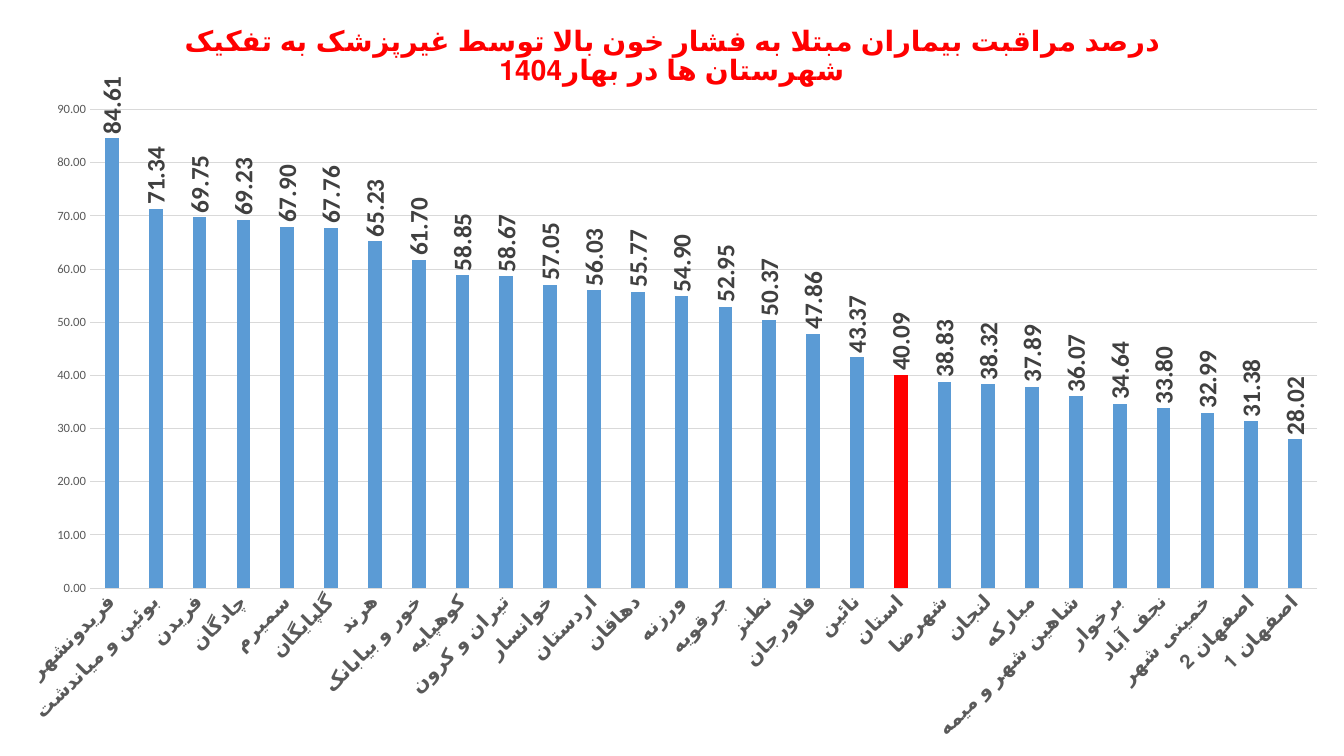
from lxml import etree
from pptx import Presentation
from pptx.chart.data import CategoryChartData
from pptx.dml.color import RGBColor
from pptx.enum.chart import XL_CHART_TYPE, XL_LABEL_POSITION, XL_TICK_MARK
from pptx.oxml import parse_xml
from pptx.oxml.ns import nsdecls, qn
from pptx.util import Inches, Pt

COLUMN = XL_CHART_TYPE.COLUMN_CLUSTERED
OUTSIDE = XL_LABEL_POSITION.OUTSIDE_END
NO_TICK = XL_TICK_MARK.NONE
BLUE = RGBColor(0x5B, 0x9B, 0xD5)
RED = RGBColor(0xFF, 0x00, 0x00)
BLACK = RGBColor(0x00, 0x00, 0x00)
DARK = RGBColor(0x40, 0x40, 0x40)
GRAY = RGBColor(0x59, 0x59, 0x59)
PALE = RGBColor(0xD9, 0xD9, 0xD9)

TITLE = "درصد مراقبت بیماران مبتلا به فشار خون بالا توسط غیرپزشک به تفکیک شهرستان ها در بهار1404"
STATE = "استان"
RATES = {
    "فریدونشهر": 84.61,
    "بوئین و میاندشت": 71.34,
    "فریدن": 69.75,
    "چادگان": 69.23,
    "سمیرم": 67.9,
    "گلپایگان": 67.76,
    "هرند": 65.23,
    "خور و بیابانک": 61.7,
    "کوهپایه": 58.85,
    "تیران و کرون": 58.67,
    "خوانسار": 57.05,
    "اردستان": 56.03,
    "دهاقان": 55.77,
    "ورزنه": 54.9,
    "جرقویه": 52.95,
    "نطنز": 50.37,
    "فلاورجان": 47.86,
    "نائین": 43.37,
    STATE: 40.09,
    "شهرضا": 38.83,
    "لنجان": 38.32,
    "مبارکه": 37.89,
    "شاهین شهر و میمه": 36.07,
    "برخوار": 34.64,
    "نجف آباد": 33.8,
    "خمینی شهر": 32.99,
    "اصفهان 2": 31.38,
    "اصفهان 1": 28.02,
}


def style(font, size=10, color=BLACK, bold=False):
    """Format a font."""
    font.name, font.size, font.bold = "Calibri", Pt(size), bold
    font.color.rgb = color


def write(frame, text, **form):
    """Put formatted text in a frame."""
    frame.text = text
    style(frame.paragraphs[0].runs[0].font, **form)


def turn(part, angle):
    """Rotate the text of a chart part by degrees."""
    body = part._element.find(qn("c:txPr")).find(qn("a:bodyPr"))
    body.set("rot", str(angle * 60000))
    body.set("vert", "horz")


class Deck:
    """Hold the deck, its size and the current slide."""

    def __init__(self, width, height):
        """Start a deck with one blank slide."""
        self.show = Presentation()
        self.show.slide_width = self.width = Inches(width)
        self.show.slide_height = self.height = Inches(height)
        self.slide = self.show.slides.add_slide(self.show.slide_layouts[6])

    def chart(self, rates, left, top, width, height):
        """Add a column chart placed by shares of the slide."""
        data = CategoryChartData(number_format="0.00")
        data.categories = list(rates)
        data.add_series("Series 1", list(rates.values()))
        box = (int(left * self.width), int(top * self.height),
               int(width * self.width), int(height * self.height))
        chart = self.slide.shapes.add_chart(COLUMN, *box, data).chart
        style(chart.font)
        chart.has_legend = False
        return chart

    def title(self, chart, text, **form):
        """Give the chart its title."""
        chart.has_title = True
        write(chart.chart_title.text_frame, text, **form)
        chart.chart_title.include_in_layout = False

    def plot(self, chart, **shares):
        """Place the inner plot area by shares of the chart."""
        area = chart._chartSpace.chart.plotArea
        for old in area.findall(qn("c:layout")):
            area.remove(old)
        layout = parse_xml(f"<c:layout {nsdecls('c')}><c:manualLayout/></c:layout>")
        modes = {"layoutTarget": "inner", "xMode": "edge", "yMode": "edge"}
        for name, value in {**modes, **shares}.items():
            etree.SubElement(layout[0], qn(f"c:{name}")).set("val", str(value))
        area.insert(0, layout)

    def axes(self, chart):
        """Format both axes and the grid lines."""
        names, scale = chart.category_axis, chart.value_axis
        for axis in (names, scale):
            axis.major_tick_mark = axis.minor_tick_mark = NO_TICK
        style(names.tick_labels.font, size=14, color=GRAY, bold=True)
        style(scale.tick_labels.font, size=9, color=GRAY)
        turn(names, -45)
        scale.minimum_scale, scale.maximum_scale, scale.major_unit = 0, 90, 10
        scale.tick_labels.number_format = "0.00"
        scale.tick_labels.number_format_is_linked = False
        scale.format.line.fill.background()
        for line in (names.format.line, scale.major_gridlines.format.line):
            line.width = Pt(0.75)
            line.color.rgb = PALE

    def bars(self, chart, mark):
        """Format the bars, their values and the marked bar."""
        plot = chart.plots[0]
        plot.gap_width, plot.overlap, plot.vary_by_categories = 219, -27, False
        series = plot.series[0]
        series.invert_if_negative = False
        for part, color in ((series, BLUE), (series.points[mark], RED)):
            part.format.fill.solid()
            part.format.fill.fore_color.rgb = color
        labels = series.data_labels
        style(labels.font, size=18, color=DARK, bold=True)
        turn(labels, -90)
        labels.show_value = True
        labels.position = OUTSIDE
        labels.number_format = "0.00"
        labels.number_format_is_linked = False


def main():
    """Build and save the slide."""
    deck = Deck(13.33, 7.5)
    chart = deck.chart(RATES, 0, 0, 1, 1)
    deck.title(chart, TITLE, size=20, color=RED, bold=True)
    deck.plot(chart, x=0.067, y=0.145, w=0.913, h=0.633)
    deck.axes(chart)
    deck.bars(chart, list(RATES).index(STATE))
    deck.show.save("out.pptx")


if __name__ == "__main__":
    main()
